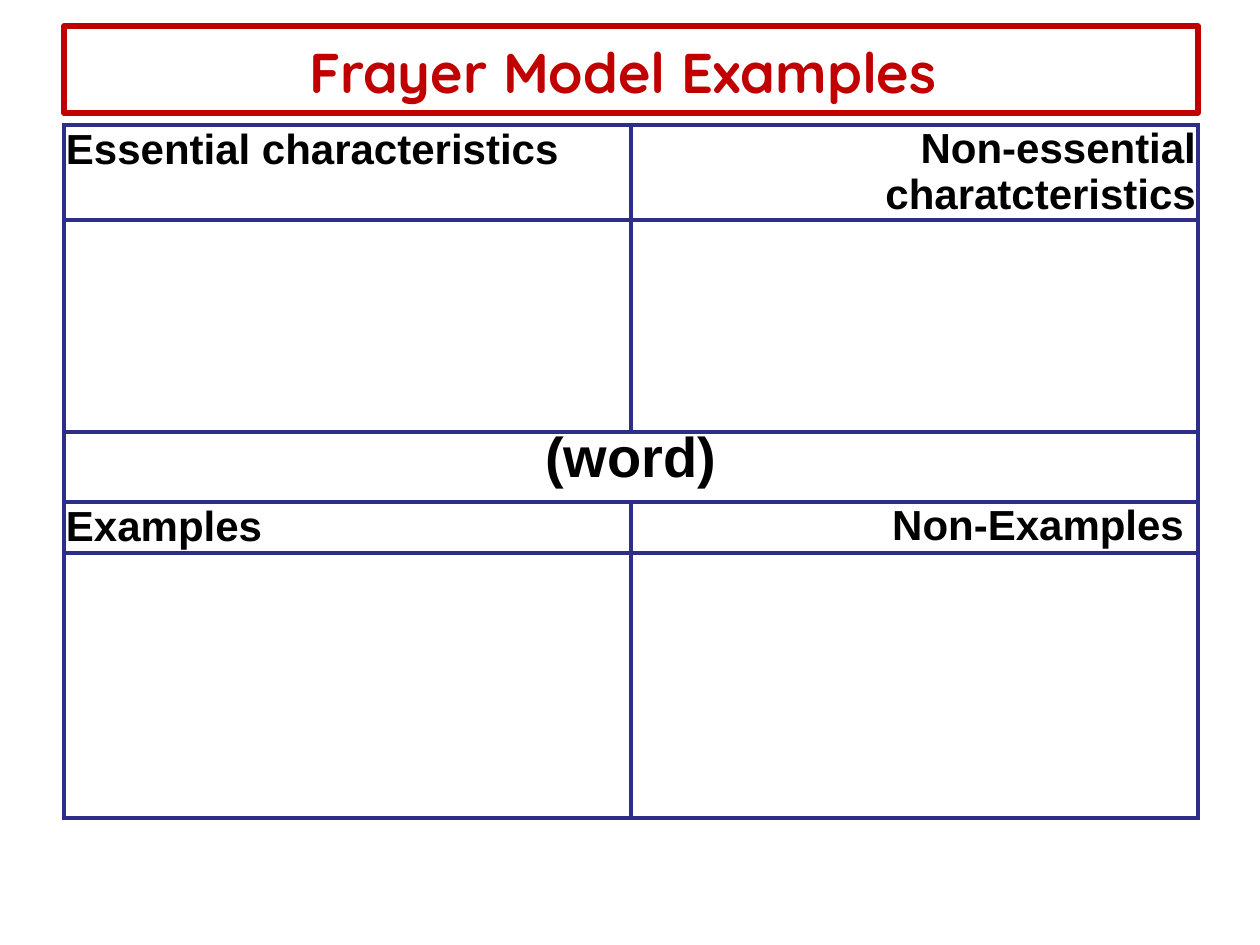
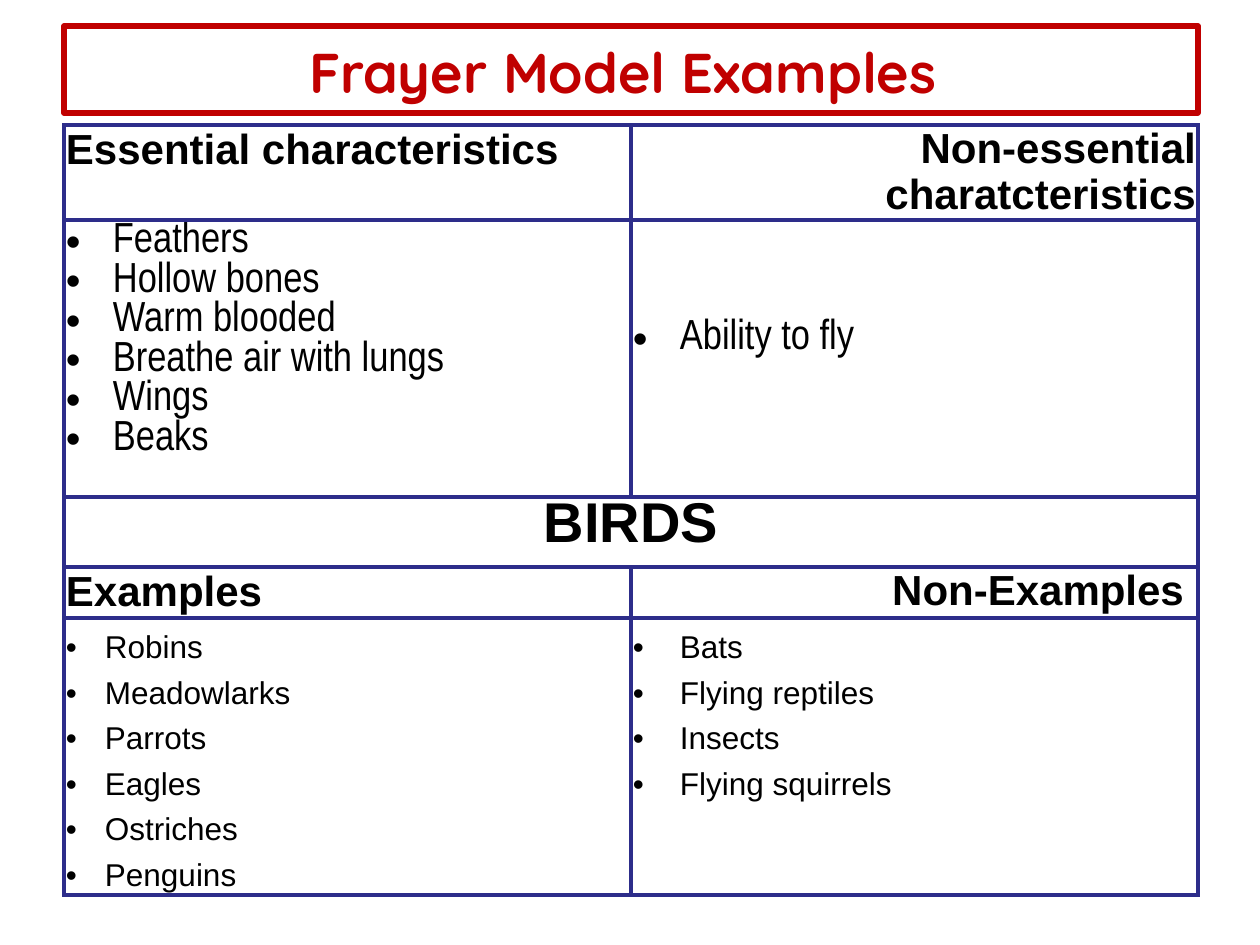
from lxml import etree
from pptx import Presentation
from pptx import util as u
from pptx.dml.color import RGBColor
from pptx.enum import shapes, text
from pptx.oxml.ns import qn

PX = 914400 // 126  # one px in EMU

# Shared look
RED, BLUE, BLACK, WHITE = "C00000", "2D2D8A", "000000", "FFFFFF"
LEFT, WIDTH = 64, 1134
PAD = 2
LEADING = 26
ALIGN = {"left": text.PP_ALIGN.LEFT, "center": text.PP_ALIGN.CENTER,
         "right": text.PP_ALIGN.RIGHT}


def px(n):
    return u.Emu(n * PX)


def rgb(value):
    return RGBColor.from_string(value)


def add_bullet(p, indent):
    pPr = p._p.get_or_add_pPr()
    pPr.set("marL", str(px(indent)))
    pPr.set("indent", str(-px(indent)))
    etree.SubElement(pPr, qn("a:buFont")).set("typeface", "Arial")
    etree.SubElement(pPr, qn("a:buChar")).set("char", "•")


def write_text(tf, content, size=24, font="Arial", color=BLACK, bold=True,
               align="left", leading=None, bullet=None):
    """Write one paragraph per line; bullet is the hanging indent in px."""
    for i, line in enumerate(content.split("\n")):
        p = tf.add_paragraph() if i else tf.paragraphs[0]
        if bullet:
            add_bullet(p, bullet)
        p.alignment = ALIGN[align]
        if leading:
            p.line_spacing = u.Pt(leading)
        r = p.add_run()
        r.text = line
        r.font.size, r.font.name, r.font.bold = u.Pt(size), font, bold
        r.font.color.rgb = rgb(color)


def add_title(s, title):
    sp = s.shapes.add_shape(shapes.MSO_SHAPE.RECTANGLE,
                            px(LEFT), px(26), px(WIDTH), px(87))
    sp.shadow.inherit = False
    sp.fill.background()
    sp.line.color.rgb = rgb(RED)
    sp.line.width = u.Pt(3)
    etree.SubElement(sp.line._get_or_add_ln(), qn("a:round"))
    tf = sp.text_frame
    tf.word_wrap = True
    tf.vertical_anchor = text.MSO_ANCHOR.MIDDLE
    tf.margin_left, tf.margin_right = px(12), px(28)
    tf.margin_top, tf.margin_bottom = px(10), px(6)
    write_text(tf, title, size=32, font="Quicksand", color=RED, align="center")


def style_cell(cell):
    cell.margin_left = cell.margin_right = px(PAD)
    cell.margin_top = cell.margin_bottom = px(PAD)
    tcPr = cell._tc.get_or_add_tcPr()
    for side in ("lnL", "lnR", "lnT", "lnB"):
        ln = etree.SubElement(tcPr, qn(f"a:{side}"), w=str(u.Pt(2.25)))
        fill = etree.SubElement(ln, qn("a:solidFill"))
        etree.SubElement(fill, qn("a:srgbClr"), val=BLUE)
    cell.fill.solid()
    cell.fill.fore_color.rgb = rgb(WHITE)


def add_frayer_table(s, word, row_heights):
    """Four headed quadrants around a central word."""
    table = s.shapes.add_table(len(row_heights), 2, px(LEFT), px(125),
                               px(WIDTH), px(sum(row_heights))).table
    table.first_row = table.horz_banding = False
    for row, height in zip(table.rows, row_heights):
        row.height = px(height)
    for column in table.columns:
        column.width = px(WIDTH // 2)
    for cell in table.iter_cells():
        style_cell(cell)

    # Central word
    middle = table.cell(2, 0)
    middle.merge(table.cell(2, 1))
    middle.vertical_anchor = text.MSO_ANCHOR.MIDDLE
    write_text(middle.text_frame, word, size=32, align="center", leading=LEADING)

    # Quadrant headings
    for row, left, right in ((0, "Essential characteristics",
                              "Non-essential charatcteristics"),
                             (3, "Examples", "Non-Examples")):
        write_text(table.cell(row, 0).text_frame, left)
        write_text(table.cell(row, 1).text_frame, right,
                   align="right", leading=LEADING)
    table.cell(3, 1).margin_right = px(14)
    return table


def fill_birds(table):
    # Characteristics
    write_text(table.cell(1, 0).text_frame,
               "Feathers\nHollow bones\nWarm blooded\n"
               "Breathe air with lungs\nWings\nBeaks",
               font="Arial Narrow", bold=False, bullet=47)
    ability = table.cell(1, 1)
    ability.margin_top = px(93)
    write_text(ability.text_frame, "Ability to fly", font="Arial Narrow",
               bold=False, bullet=47, leading=LEADING)

    # Examples and non-examples
    for col, indent, animals in (
            (0, 39, "Robins\nMeadowlarks\nParrots\nEagles\nOstriches\nPenguins"),
            (1, 47, "Bats\nFlying reptiles\nInsects\nFlying squirrels")):
        write_text(table.cell(4, col).text_frame, animals, size=18, bold=False,
                   bullet=indent, leading=LEADING)


def add_frayer_slide(prs, word, row_heights):
    s = prs.slides.add_slide(prs.slide_layouts[6])
    add_title(s, "Frayer Model Examples")
    return add_frayer_table(s, word, row_heights)


def main():
    prs = Presentation()
    prs.slide_width, prs.slide_height = u.Inches(10), u.Inches(7.5)
    add_frayer_slide(prs, "(word)", (95, 212, 70, 51, 265))
    fill_birds(add_frayer_slide(prs, "BIRDS", (95, 277, 70, 51, 277)))
    prs.save("out.pptx")


if __name__ == "__main__":
    main()
